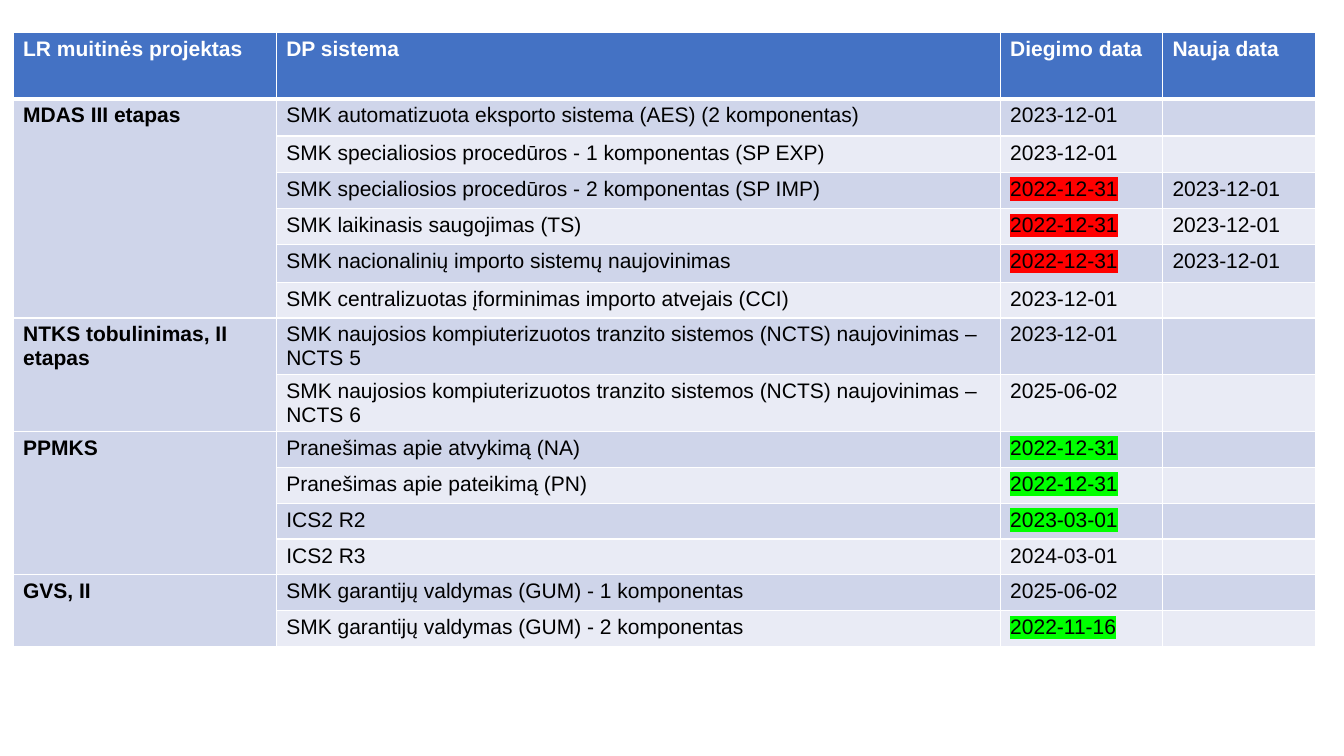
from dataclasses import dataclass
from typing import Optional

from pptx import Presentation
from pptx.dml.color import RGBColor
from pptx.oxml.xmlchemy import OxmlElement
from pptx.table import _Cell as Cell
from pptx.util import Inches, Pt


@dataclass(frozen=True)
class Theme:
    font: str = "Arial"
    size: float = 15
    text: str = "000000"
    light: str = "FFFFFF"
    header: str = "4472C4"
    bands: tuple[str, str] = ("CFD5EA", "E9EBF5")
    late: str = "FF0000"
    done: str = "00FF00"
    thin: float = 1
    thick: float = 3


@dataclass(frozen=True)
class System:
    name: str
    date: str
    height: float
    mark: Optional[str] = None
    new_date: str = ""


@dataclass(frozen=True)
class Project:
    name: str
    systems: tuple[System, ...]


THEME = Theme()
LEFT, TOP = 0.13, 0.32
COLUMNS = (2.61, 7.18, 1.61, 1.52)
HEADER_HEIGHT = 0.66
HEADINGS = ("LR muitinės projektas", "DP sistema", "Diegimo data", "Nauja data")
NCTS = "SMK naujosios kompiuterizuotos tranzito sistemos (NCTS) naujovinimas – NCTS"

PROJECTS = (
    Project("MDAS III etapas", (
        System("SMK automatizuota eksporto sistema (AES) (2 komponentas)", "2023-12-01", 0.37),
        System("SMK specialiosios procedūros - 1 komponentas (SP EXP)", "2023-12-01", 0.36),
        System("SMK specialiosios procedūros - 2 komponentas (SP IMP)", "2022-12-31", 0.36,
               THEME.late, "2023-12-01"),
        System("SMK laikinasis saugojimas (TS)", "2022-12-31", 0.36, THEME.late, "2023-12-01"),
        System("SMK nacionalinių importo sistemų naujovinimas", "2022-12-31", 0.37,
               THEME.late, "2023-12-01"),
        System("SMK centralizuotas įforminimas importo atvejais (CCI)", "2023-12-01", 0.33),
    )),
    Project("NTKS tobulinimas, II etapas", (
        System(f"{NCTS} 5", "2023-12-01", 0.39),
        System(f"{NCTS} 6", "2025-06-02", 0.34),
    )),
    Project("PPMKS", (
        System("Pranešimas apie atvykimą (NA)", "2022-12-31", 0.33, THEME.done),
        System("Pranešimas apie pateikimą (PN)", "2022-12-31", 0.35, THEME.done),
        System("ICS2 R2", "2023-03-01", 0.35, THEME.done),
        System("ICS2 R3", "2024-03-01", 0.33),
    )),
    Project("GVS, II", (
        System("SMK garantijų valdymas (GUM) - 1 komponentas", "2025-06-02", 0.31),
        System("SMK garantijų valdymas (GUM) - 2 komponentas", "2022-11-16", 0.31, THEME.done),
    )),
)


def add_color(parent, tag: str, color: str) -> None:
    """Append a fill-like element that holds one RGB colour."""
    holder = OxmlElement(tag)
    value = OxmlElement("a:srgbClr")
    value.set("val", color)
    holder.append(value)
    parent.append(holder)


def style_cell(cell: Cell, fill: str, top: float = THEME.thin, bottom: float = THEME.thin) -> None:
    """Draw the borders of a cell, then fill it."""
    properties = cell._tc.get_or_add_tcPr()
    widths = {"a:lnL": THEME.thin, "a:lnR": THEME.thin, "a:lnT": top, "a:lnB": bottom}
    for tag, width in widths.items():
        border = OxmlElement(tag)
        border.set("w", str(Pt(width)))
        add_color(border, "a:solidFill", THEME.light)
        properties.append(border)
    cell.fill.solid()
    cell.fill.fore_color.rgb = RGBColor.from_string(fill)


def write(cell: Cell, text: str, *, color: str = THEME.text, bold: bool = False,
          mark: Optional[str] = None) -> None:
    """Write formatted text; an empty cell only keeps the type size."""
    paragraph = cell.text_frame.paragraphs[0]
    if not text:
        ending = OxmlElement("a:endParaRPr")
        ending.set("sz", str(int(THEME.size * 100)))
        paragraph._p.append(ending)
        return
    run = paragraph.add_run()
    run.text = text
    run.font.size = Pt(THEME.size)
    run.font.bold = bold
    run.font.color.rgb = RGBColor.from_string(color)
    if mark:
        add_color(run.font._element, "a:highlight", mark)
    run.font.name = THEME.font


def main() -> None:
    presentation = Presentation()
    presentation.slide_width, presentation.slide_height = Inches(13.33), Inches(7.5)
    slide = presentation.slides.add_slide(presentation.slide_layouts[6])

    # Table grid
    heights = [HEADER_HEIGHT] + [system.height for project in PROJECTS for system in project.systems]
    table = slide.shapes.add_table(
        len(heights), len(COLUMNS), Inches(LEFT), Inches(TOP),
        Inches(sum(COLUMNS)), Inches(sum(heights))).table
    for column, width in zip(table.columns, COLUMNS):
        column.width = Inches(width)
    for row, height in zip(table.rows, heights):
        row.height = Inches(height)

    # Header row
    for index, heading in enumerate(HEADINGS):
        cell = table.cell(0, index)
        style_cell(cell, THEME.header, bottom=THEME.thick)
        write(cell, heading, color=THEME.light, bold=True)

    # Projects, each with its systems
    row_index = 1
    for project in PROJECTS:
        first = row_index
        for position, system in enumerate(project.systems):
            top = THEME.thick if row_index == 1 else THEME.thin
            band = THEME.bands[(row_index - 1) % 2]
            cells = [table.cell(row_index, index) for index in range(len(COLUMNS))]
            for cell, fill in zip(cells, (THEME.bands[0], band, band, band)):
                style_cell(cell, fill, top=top)
            write(cells[0], "" if position else project.name, bold=True)
            write(cells[1], system.name)
            write(cells[2], system.date, mark=system.mark)
            write(cells[3], system.new_date)
            row_index += 1
        table.cell(first, 0).merge(table.cell(row_index - 1, 0))

    presentation.save("out.pptx")


if __name__ == "__main__":
    main()
